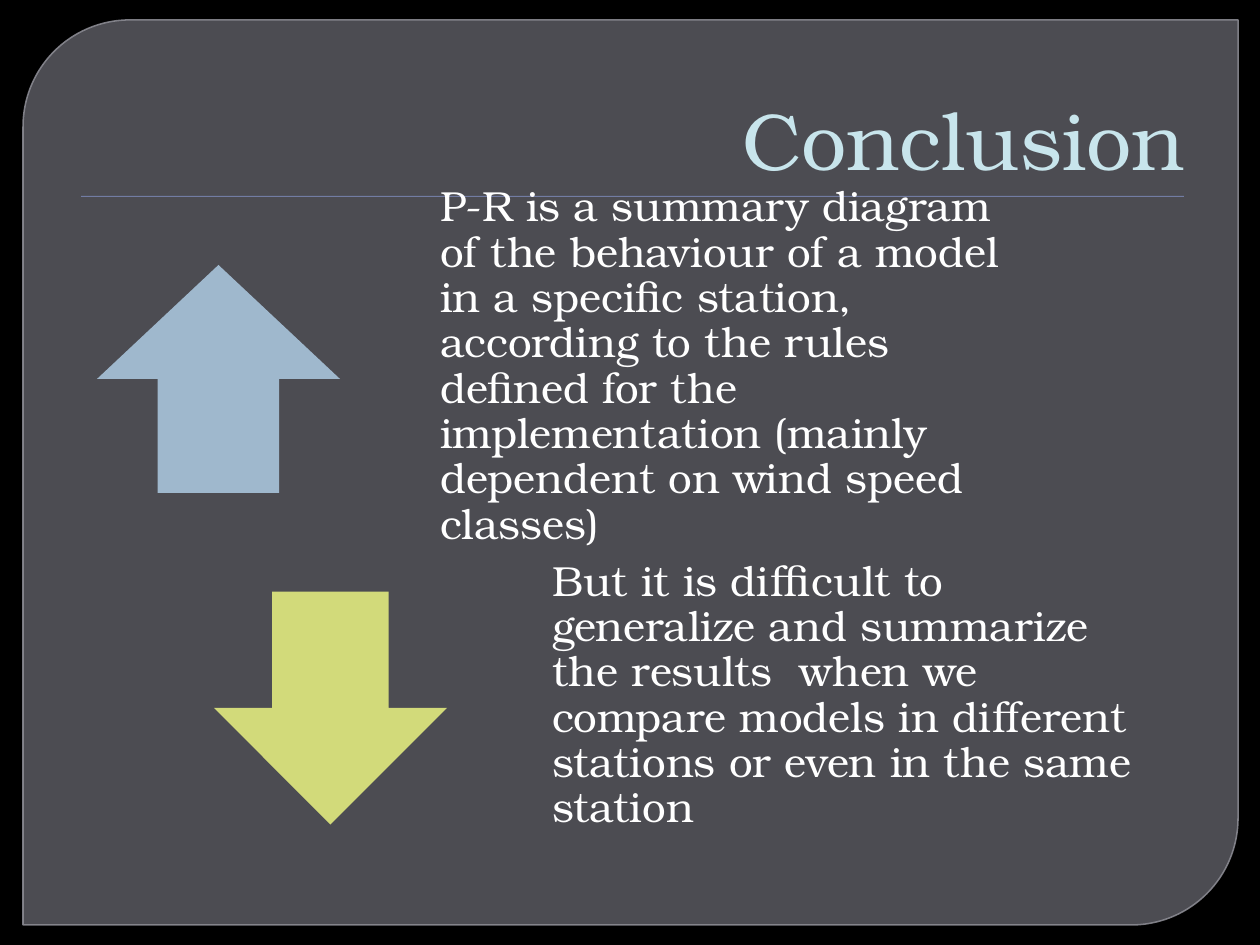
from dataclasses import dataclass

from lxml.etree import SubElement
from pptx import Presentation
from pptx.dml.color import RGBColor
from pptx.enum.shapes import MSO_SHAPE as SHAPE
from pptx.enum.text import MSO_ANCHOR as ANCHOR, MSO_AUTO_SIZE as AUTOSIZE, PP_ALIGN as ALIGN
from pptx.oxml.ns import qn
from pptx.util import Pt

PX = 914400 / 126


@dataclass(frozen=True)
class Theme:
    font: str = "TeX Gyre Bonum"
    title_size: int = 46
    body_size: int = 24
    background: str = "000000"
    panel: str = "76767E"
    panel_line: str = "8C8C94"
    rule: str = "727CA3"
    title: str = "C8E5EC"
    body: str = "FFFFFF"
    up: str = "9FB8CD"
    down: str = "D2DA7A"


THEME = Theme()


def rgb(value):
    return RGBColor.from_string(value)


def emu(*lengths):
    return [round(length * PX) for length in lengths]


def set_alpha(fill_parent, percent):
    color = fill_parent.find(qn("a:solidFill"))[0]
    SubElement(color, qn("a:alpha"), val=str(percent * 1000))


def add_filled(slide, kind, box, color):
    sp = slide.shapes.add_shape(kind, *emu(*box))
    sp.shadow.inherit = False
    sp.fill.solid()
    sp.fill.fore_color.rgb = rgb(color)
    sp.line.fill.background()
    return sp


def write_text(tf, text, size, color, frame, paragraph):
    for name, value in frame.items():
        setattr(tf, name, value)
    p = tf.paragraphs[0]
    for name, value in paragraph.items():
        setattr(p, name, value)
    r = p.add_run()
    r.text = text
    for name, value in {"name": THEME.font, "size": Pt(size)}.items():
        setattr(r.font, name, value)
    r.font.color.rgb = rgb(color)


def add_backdrop(slide, box):
    left, top, width, height = box
    slide.background.fill.solid()
    slide.background.fill.fore_color.rgb = rgb(THEME.background)
    panel = add_filled(slide, SHAPE.ROUND_2_DIAG_RECTANGLE, box, THEME.panel)
    panel.adjustments[0] = 0.118
    panel.adjustments[1] = 0
    panel.line.color.rgb = rgb(THEME.panel_line)
    panel.line.width = Pt(0.87)
    props = panel._element.spPr
    set_alpha(props, 65)
    set_alpha(props.find(qn("a:ln")), 88)
    rule_box = (left + 58, top + 176, width - 112, 1)
    add_filled(slide, SHAPE.RECTANGLE, rule_box, THEME.rule)


def add_title(slide, box, text):
    title = slide.shapes.title
    slide.shapes._spTree.append(title._element)
    title.left, title.top, title.width, title.height = emu(*box)
    frame = {"auto_size": AUTOSIZE.NONE, "word_wrap": True, "vertical_anchor": ANCHOR.BOTTOM}
    write_text(title.text_frame, text, THEME.title_size, THEME.title, frame,
               {"alignment": ALIGN.RIGHT})


def add_point(slide, box, kind, arrow_size, color, text):
    left, top, width, height = box
    band, text_offset = 243, 319
    arrow_w, arrow_h = arrow_size
    arrow_box = (left + (band - arrow_w) / 2, top + (height - arrow_h) / 2, arrow_w, arrow_h)
    add_filled(slide, kind, arrow_box, color)
    text_box = (left + text_offset, top, width - text_offset, height)
    tf = slide.shapes.add_textbox(*emu(*text_box)).text_frame
    inset = emu(24)[0]
    frame = {"word_wrap": True, "vertical_anchor": ANCHOR.MIDDLE, "margin_left": inset,
             "margin_top": 0, "margin_right": inset, "margin_bottom": inset}
    write_text(tf, text, THEME.body_size, THEME.body, frame,
               {"alignment": ALIGN.LEFT, "line_spacing": 0.9, "space_after": Pt(8)})


def main():
    prs = Presentation()
    prs.slide_width, prs.slide_height = emu(1260, 945)
    slide = prs.slides.add_slide(prs.slide_layouts[5])
    add_backdrop(slide, (23, 20, 1215, 905))
    add_title(slide, (63, 35, 1134, 158), "Conclusion")
    points = [
        (SHAPE.UP_ARROW, (243, 228), THEME.up,
         "P-R is a summary diagram of the behaviour of a model in a specific station, "
         "according to the rules defined for the implementation "
         "(mainly dependent on wind speed classes)"),
        (SHAPE.DOWN_ARROW, (233, 233), THEME.down,
         "But it is difficult to generalize and summarize the results  when we compare "
         "models in different stations or even in the same station"),
    ]
    for i, point in enumerate(points):
        add_point(slide, (97 + 112 * i, 227 + 329 * i, 954, 304), *point)
    prs.save("out.pptx")


if __name__ == "__main__":
    main()
